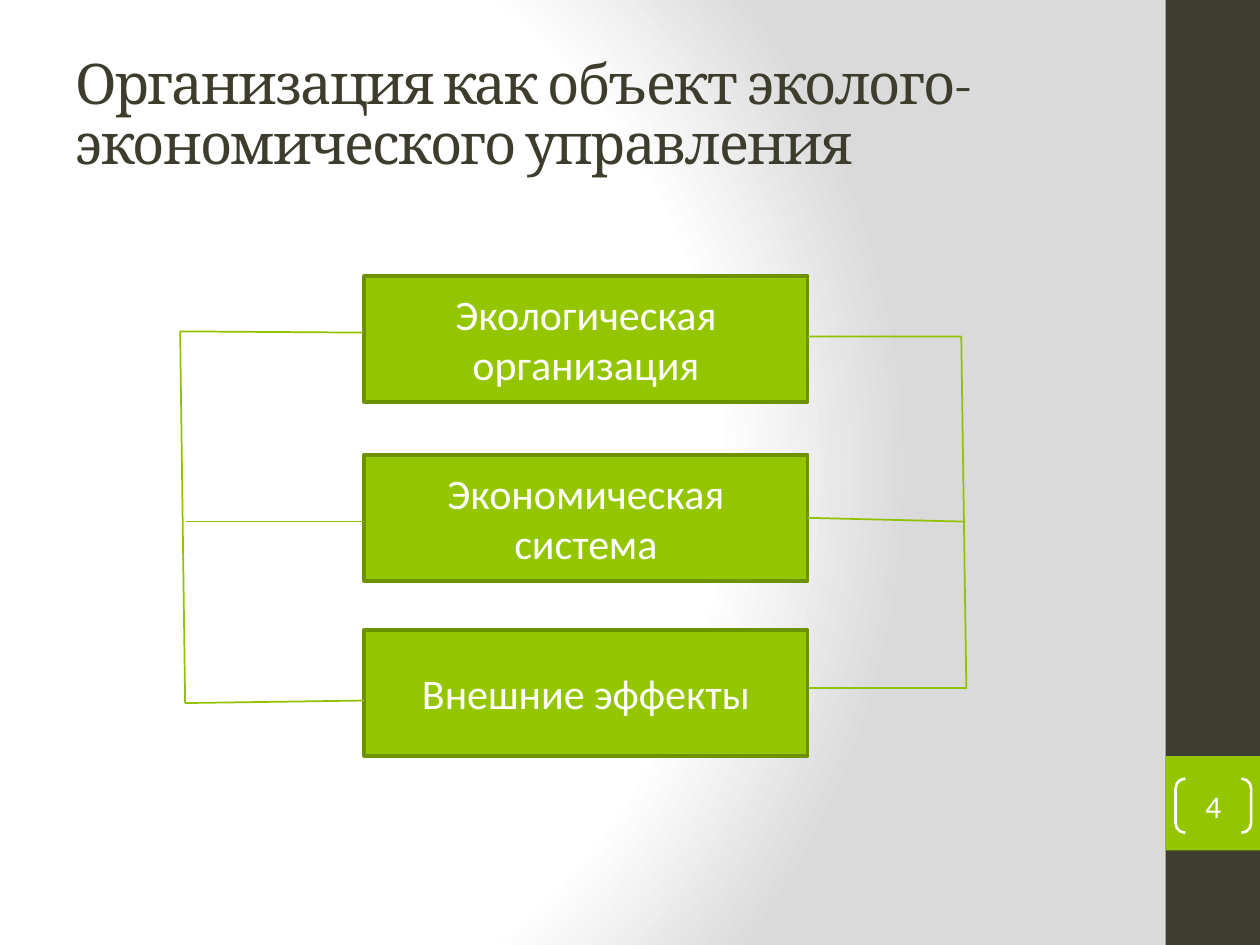
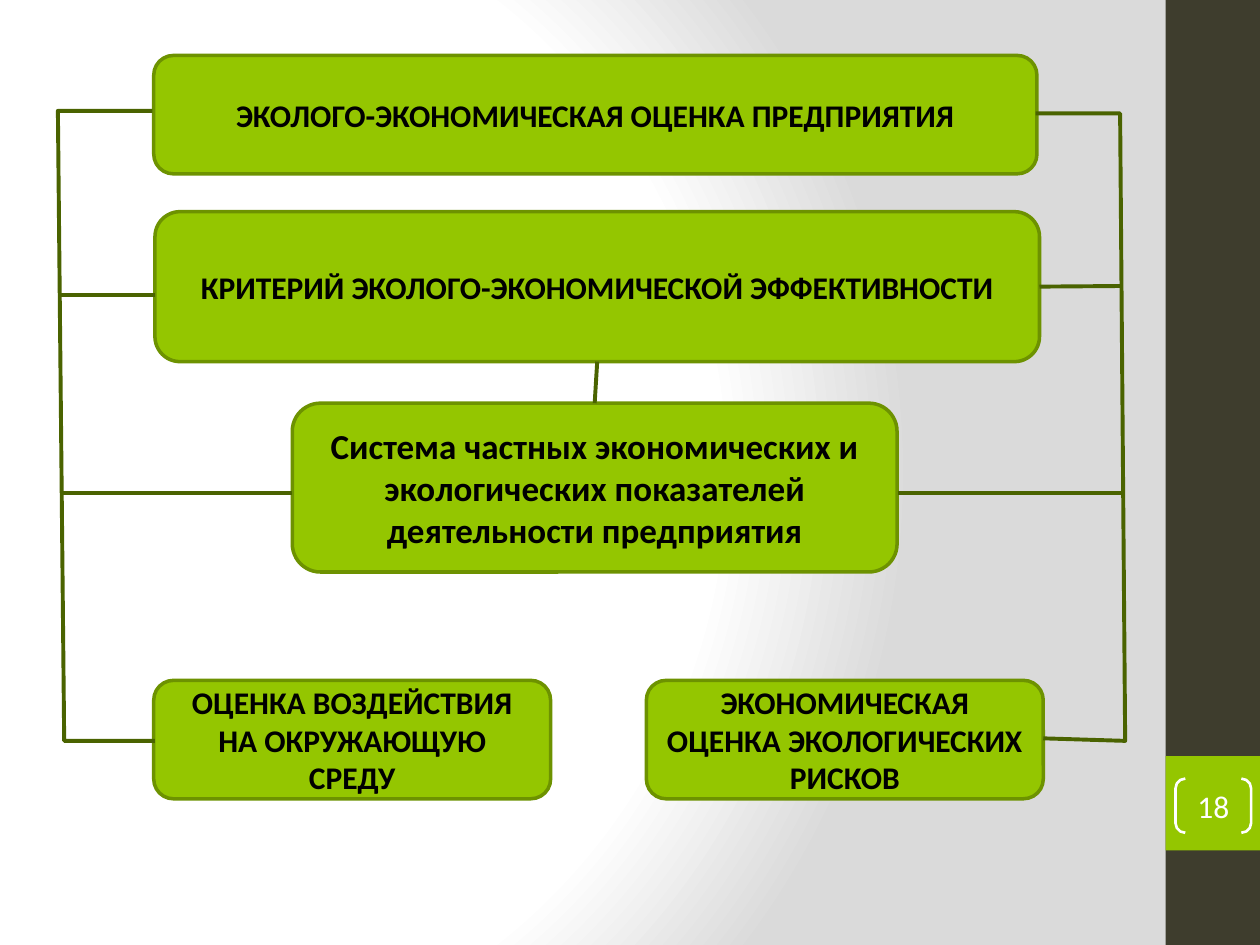
"""Build two slides on ecological and economic management of an organisation."""
from dataclasses import dataclass
from typing import Optional

from pptx import Presentation
from pptx.dml.color import RGBColor
from pptx.enum.shapes import MSO_CONNECTOR as Connector, MSO_SHAPE as Preset
from pptx.enum.text import MSO_ANCHOR as Anchor, PP_ALIGN as Align
from pptx.oxml import parse_xml
from pptx.oxml.ns import nsdecls, qn
from pptx.shapes.autoshape import Shape
from pptx.slide import Slide
from pptx.text.text import TextFrame
from pptx.util import Emu, Pt
from lxml.etree import SubElement

EMU_PER_PX = 9144
COLORS = {
    "dark": "3E3D2D", "green": "94C600", "border": "6D9200", "thin": "91C200",
    "deep": "4A6300", "white": "FFFFFF", "black": "000000", "gray": "DADADA",
}
TOP, LEFT, BOTTOM, RIGHT = range(4)
Point = tuple[int, int]
Rect = tuple[int, int, int, int]


@dataclass(frozen=True)
class TextStyle:
    """Font settings of one paragraph."""
    size: int
    color: str
    font: str = "Calibri"
    bold: bool = False
    align: Align = Align.CENTER


@dataclass(frozen=True)
class Box:
    """A labelled block of a diagram."""
    text: str
    rect: Rect
    style: TextStyle
    preset: Preset = Preset.ROUNDED_RECTANGLE


@dataclass(frozen=True)
class Joint:
    """A side of a block, given by the block's index."""
    box: int
    side: int


@dataclass(frozen=True)
class Branch:
    """A straight line between two points, joined to blocks where set."""
    start: Point
    end: Point
    start_joint: Optional[Joint] = None
    end_joint: Optional[Joint] = None


@dataclass(frozen=True)
class Diagram:
    """Everything that differs between the slides."""
    number: str
    boxes: list[Box]
    brackets: list[list[Point]]
    branches: list[Branch]
    line_color: str
    line_width: float
    title: str = ""


TITLE = TextStyle(32, "dark", "Cambria", align=Align.LEFT)
NUMBER = TextStyle(18, "white")
LABEL = TextStyle(24, "white")
STRONG = TextStyle(18, "black", bold=True)
STRONG_LARGE = TextStyle(20, "black", bold=True)

ORGANISATION = Diagram(
    number="4",
    title="Организация как объект эколого-экономического управления",
    boxes=[
        Box(text, (289, top, 352, 100), LABEL, Preset.RECTANGLE)
        for text, top in (
            ("Экологическая организация", 219),
            ("Экономическая система", 361),
            ("Внешние эффекты", 500),
        )
    ],
    brackets=[
        [(288, 264), (143, 263), (147, 558), (289, 556)],
        [(641, 267), (763, 267), (767, 546), (642, 546)],
    ],
    branches=[
        Branch((148, 414), (289, 414)),
        Branch((641, 411), (766, 414), start_joint=Joint(1, RIGHT)),
    ],
    line_color="thin",
    line_width=1,
)

ASSESSMENT = Diagram(
    number="18",
    boxes=[
        Box("ЭКОЛОГО-ЭКОНОМИЧЕСКАЯ ОЦЕНКА ПРЕДПРИЯТИЯ", (122, 44, 701, 94), STRONG),
        Box("КРИТЕРИЙ ЭКОЛОГО-ЭКОНОМИЧЕСКОЙ ЭФФЕКТИВНОСТИ", (123, 168, 702, 119), STRONG),
        Box("Система частных экономических и экологических показателей "
            "деятельности предприятия", (232, 320, 480, 134), STRONG_LARGE),
        Box("ОЦЕНКА ВОЗДЕЙСТВИЯ НА ОКРУЖАЮЩУЮ СРЕДУ", (122, 540, 315, 94), STRONG),
        Box("ЭКОНОМИЧЕСКАЯ ОЦЕНКА ЭКОЛОГИЧЕСКИХ РИСКОВ", (513, 540, 315, 94), STRONG),
    ],
    brackets=[
        [(121, 88), (46, 88), (51, 588), (123, 588)],
        [(822, 90), (889, 90), (893, 588), (828, 586)],
    ],
    branches=[
        Branch((47, 234), (123, 234)),
        Branch((825, 227), (891, 227), start_joint=Joint(1, RIGHT)),
        Branch((50, 391), (232, 391)),
        Branch((713, 391), (893, 391)),
        Branch((473, 287), (472, 320), Joint(1, BOTTOM), Joint(2, TOP)),
    ],
    line_color="deep",
    line_width=2.25,
)


def px(*lengths: int) -> list[Emu]:
    """Turn px into EMU."""
    return [Emu(length * EMU_PER_PX) for length in lengths]


def rgb(name: str) -> RGBColor:
    """Look up a colour by name."""
    return RGBColor.from_string(COLORS[name])


def write(frame: TextFrame, text: str, style: TextStyle) -> None:
    """Fill a text frame with one vertically centred paragraph."""
    frame.word_wrap = True
    frame.vertical_anchor = Anchor.MIDDLE
    paragraph = frame.paragraphs[0]
    paragraph.text = text
    paragraph.alignment = style.align
    font = paragraph.font
    font.name, font.size, font.bold = style.font, Pt(style.size), style.bold
    font.color.rgb = rgb(style.color)


def add_block(slide: Slide, preset: Preset, rect: Rect, fill: str = "",
              line: str = "", width: float = 0) -> Shape:
    """Draw a preset shape; an empty colour name means none."""
    block = slide.shapes.add_shape(preset, *px(*rect))
    block.shadow.inherit = False
    if fill:
        block.fill.solid()
        block.fill.fore_color.rgb = rgb(fill)
    else:
        block.fill.background()
    if line:
        block.line.color.rgb = rgb(line)
        block.line.width = Pt(width)
    else:
        block.line.fill.background()
    return block


def paint_background(slide: Slide) -> None:
    """Give the slide a circular white to gray gradient."""
    slide.background.fill.gradient()
    gradient = next(slide.element.iter(qn("a:gradFill")))
    stops = "".join(
        f'<a:gs pos="{percent * 1000}"><a:srgbClr val="{COLORS[name]}"/></a:gs>'
        for percent, name in ((0, "white"), (75, "white"), (100, "gray"))
    )
    gradient.getparent().replace(gradient, parse_xml(
        f'<a:gradFill {nsdecls("a")} rotWithShape="1"><a:gsLst>{stops}</a:gsLst>'
        '<a:path path="circle"><a:fillToRect l="20000" t="50000" r="100000" b="50000"/>'
        '</a:path></a:gradFill>'
    ))


def add_frame(slide: Slide, number: str) -> None:
    """Draw the background, the side band and the page number."""
    paint_background(slide)
    add_block(slide, Preset.RECTANGLE, (925, 0, 75, 750), "dark")
    add_block(slide, Preset.RECTANGLE, (925, 600, 75, 75), "green")
    page = add_block(slide, Preset.DOUBLE_BRACKET, (933, 618, 60, 43),
                     line="white", width=1.5)
    page.adjustments[0] = 0.18
    frame = page.text_frame
    frame.margin_left = frame.margin_right = frame.margin_top = frame.margin_bottom = 0
    write(frame, number, NUMBER)


def add_title(slide: Slide, text: str) -> None:
    """Write the slide title with tightened letters."""
    frame = slide.shapes.add_textbox(*px(50, 30, 833, 125)).text_frame
    write(frame, text, TITLE)
    paragraph = frame.paragraphs[0]
    paragraph.line_spacing = 0.9
    next(frame._txBody.iter(qn("a:defRPr"))).set("spc", "-100")


def add_bracket(slide: Slide, points: list[Point], color: str, width: float) -> None:
    """Draw an open polyline."""
    builder = slide.shapes.build_freeform(*points[0], scale=EMU_PER_PX)
    builder.add_line_segments(points[1:], close=False)
    bracket = builder.convert_to_shape()
    bracket.shadow.inherit = False
    bracket.fill.background()
    bracket.line.color.rgb = rgb(color)
    bracket.line.width = Pt(width)


def add_branch(slide: Slide, branch: Branch, blocks: list[Shape],
               color: str, width: float) -> None:
    """Draw a straight line and join it to its blocks."""
    line = slide.shapes.add_connector(
        Connector.STRAIGHT, *px(*branch.start, *branch.end))
    line.line.color.rgb = rgb(color)
    line.line.width = Pt(width)
    SubElement(line._element.spPr, qn("a:effectLst"))
    for joint, connect in ((branch.start_joint, line.begin_connect),
                           (branch.end_joint, line.end_connect)):
        if joint:
            connect(blocks[joint.box], joint.side)


def add_diagram(slide: Slide, diagram: Diagram) -> None:
    """Draw one whole slide."""
    add_frame(slide, diagram.number)
    if diagram.title:
        add_title(slide, diagram.title)
    blocks = []
    for box in diagram.boxes:
        block = add_block(slide, box.preset, box.rect, "green", "border", 2)
        write(block.text_frame, box.text, box.style)
        blocks.append(block)
    pen = diagram.line_color, diagram.line_width
    for points in diagram.brackets:
        add_bracket(slide, points, *pen)
    for branch in diagram.branches:
        add_branch(slide, branch, blocks, *pen)


def main() -> None:
    """Build and save the presentation."""
    presentation = Presentation()
    presentation.slide_width, presentation.slide_height = px(1000, 750)
    blank = presentation.slide_layouts[6]
    for diagram in (ORGANISATION, ASSESSMENT):
        add_diagram(presentation.slides.add_slide(blank), diagram)
    presentation.save("out.pptx")


if __name__ == "__main__":
    main()
